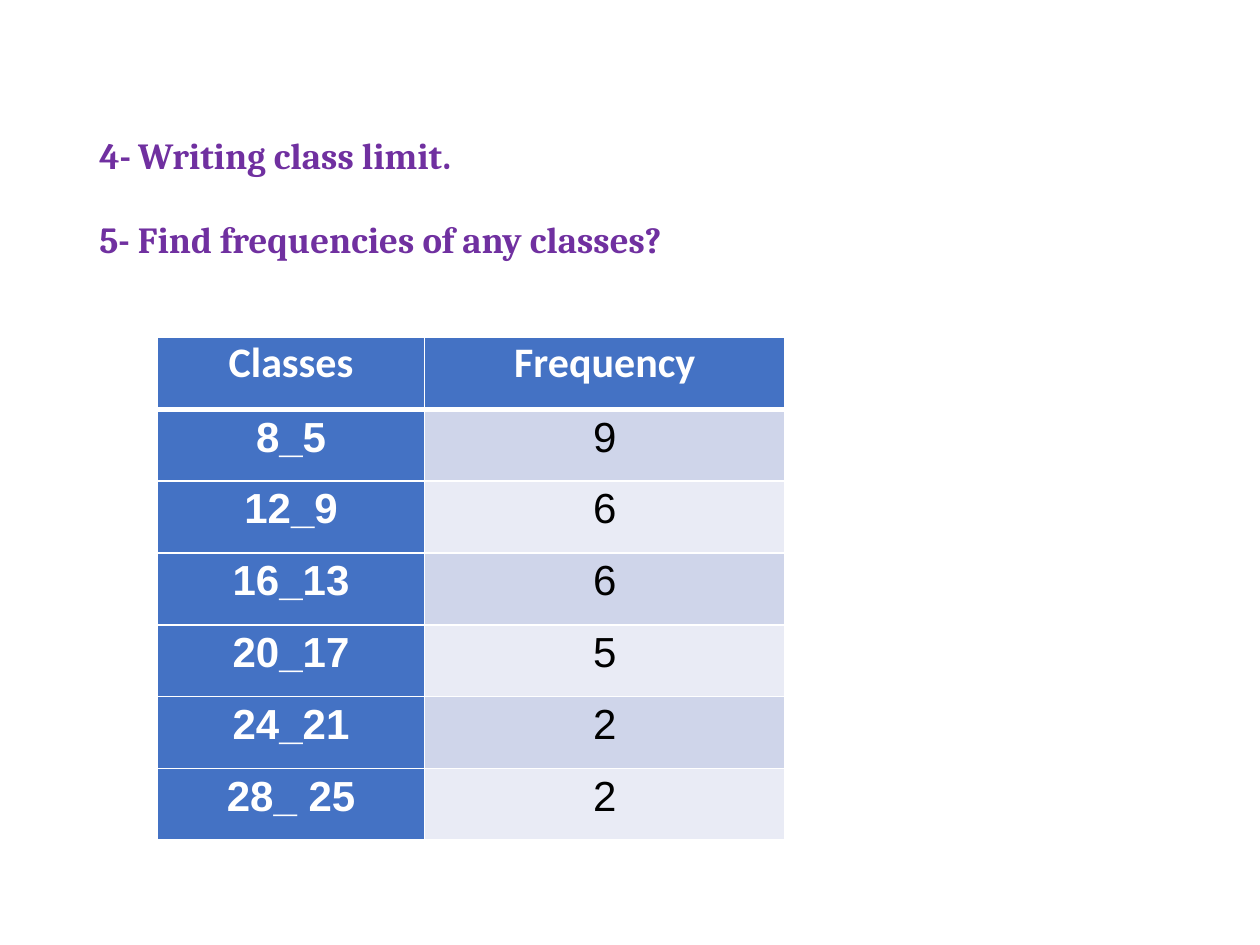
from dataclasses import dataclass

from lxml import etree
from pptx import Presentation, util as u
from pptx.dml.color import RGBColor
from pptx.enum import text
from pptx.oxml.ns import qn


@dataclass(frozen=True)
class Theme:
    heading: str = "7030A0"
    accent: str = "4472C4"
    bands: tuple = ("CFD5EA", "E9EBF5")
    light: str = "FFFFFF"
    dark: str = "000000"
    heading_font: str = "Cambria"
    table_font: str = "Calibri"
    digit_font: str = "Arial"
    heading_size: int = 21
    gap_size: int = 18
    table_size: int = 24


theme = Theme()


def add_run(paragraph, content, font_name, size, color, bold):
    run = paragraph.add_run()
    run.text = content
    run.font.name = font_name
    run.font.size = u.Pt(size)
    run.font.bold = bold
    run.font.color.rgb = RGBColor.from_string(color)
    return run


def set_borders(cell, bottom_width):
    """Draw white cell borders, 1 pt except for the bottom one."""
    properties = cell._tc.get_or_add_tcPr()
    widths = {"a:lnL": 1, "a:lnR": 1, "a:lnT": 1, "a:lnB": bottom_width}
    for position, (tag, width) in enumerate(widths.items()):
        line = etree.Element(qn(tag), w=str(u.Pt(width)))
        fill = etree.SubElement(line, qn("a:solidFill"))
        etree.SubElement(fill, qn("a:srgbClr"), val=theme.light)
        properties.insert(position, line)


presentation = Presentation()
presentation.slide_width = u.Inches(10)
presentation.slide_height = u.Inches(7.5)
slide = presentation.slides.add_slide(presentation.slide_layouts[6])

# Steps
steps = [
    [("4-", theme.heading_size, theme.heading),
     (" ", theme.gap_size, theme.dark),
     ("Writing class limit.", theme.heading_size, theme.heading)],
    [("5- Find frequencies of any classes?", theme.heading_size, theme.heading)],
]
steps_box = slide.shapes.add_textbox(
    u.Inches(0.69), u.Inches(0.83), u.Inches(8.62), u.Inches(6.27))
steps_frame = steps_box.text_frame
steps_frame.word_wrap = True
for index, runs in enumerate(steps):
    paragraph = steps_frame.add_paragraph() if index else steps_frame.paragraphs[0]
    paragraph.alignment = text.PP_ALIGN.JUSTIFY
    paragraph.line_spacing = 1.5
    paragraph.space_before = u.Pt(10 if index else 0)
    for content, size, color in runs:
        add_run(paragraph, content, theme.heading_font, size, color, True)

# Frequency table; class limits read from right to left
rows = [
    ("Classes", "Frequency"),
    ("5_8", "9"),
    ("9_12", "6"),
    ("13_16", "6"),
    ("17_20", "5"),
    ("21_24", "2"),
    ("25 _28", "2"),
]
column_widths = (2.12, 2.86)
row_height = 0.57
table = slide.shapes.add_table(
    len(rows), len(column_widths), u.Inches(1.25), u.Inches(2.68),
    u.Inches(sum(column_widths)), u.Inches(row_height * len(rows))).table
for column, width in zip(table.columns, column_widths):
    column.width = u.Inches(width)

for row_index, row in enumerate(rows):
    table.rows[row_index].height = u.Inches(row_height)
    for column_index, content in enumerate(row):
        is_header = row_index == 0 or column_index == 0
        cell = table.cell(row_index, column_index)
        cell.fill.solid()
        cell.fill.fore_color.rgb = RGBColor.from_string(
            theme.accent if is_header else theme.bands[(row_index - 1) % 2])
        set_borders(cell, 3 if row_index == 0 else 1)
        cell.vertical_anchor = text.MSO_ANCHOR.MIDDLE
        cell.margin_left = cell.margin_right = u.Inches(0.07)
        cell.margin_top, cell.margin_bottom = u.Inches(0.01), 0

        paragraph = cell.text_frame.paragraphs[0]
        paragraph.alignment = text.PP_ALIGN.CENTER
        paragraph.line_spacing = u.Pt(17.1)
        paragraph.space_after = u.Pt(10)
        paragraph._p.get_or_add_pPr().set("rtl", "1")
        run = add_run(paragraph, content, theme.table_font, theme.table_size,
                      theme.light if is_header else theme.dark, is_header)
        etree.SubElement(run._r.get_or_add_rPr(), qn("a:cs"),
                         typeface=theme.digit_font)

presentation.save("out.pptx")
